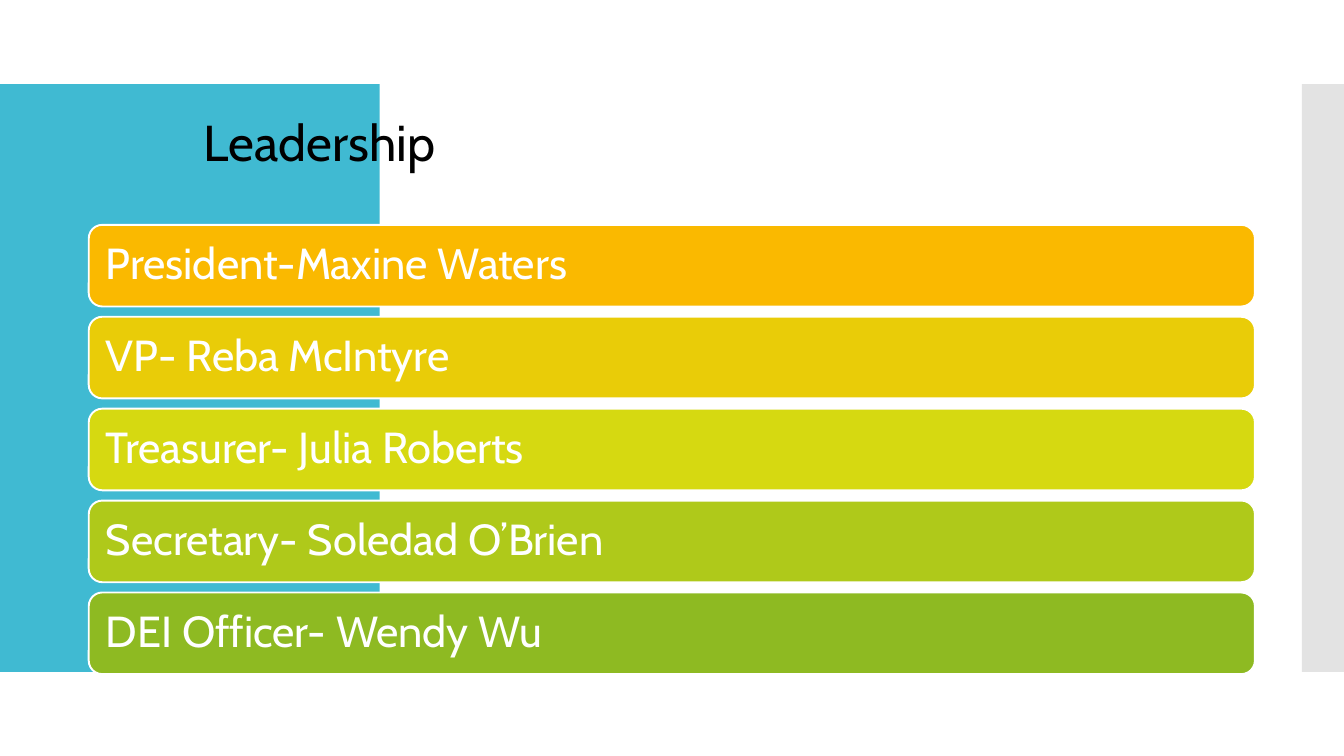
from lxml import etree
from pptx import Presentation
from pptx.dml.color import RGBColor
from pptx.enum import shapes, text
from pptx.oxml import ns
from pptx.util import Pt

TITLE = "Leadership"
OFFICERS = [
    ("President-Maxine Waters", RGBColor(0xFA, 0xB9, 0x00)),
    ("VP- Reba McIntyre", RGBColor(0xE9, 0xCC, 0x08)),
    ("Treasurer- Julia Roberts", RGBColor(0xD6, 0xD9, 0x11)),
    ("Secretary- Soledad O’Brien", RGBColor(0xAF, 0xC9, 0x1A)),
    ("DEI Officer- Wendy Wu", RGBColor(0x8E, 0xBA, 0x22)),
]

FONT = "Cabin"
BLACK = RGBColor(0x00, 0x00, 0x00)
WHITE = RGBColor(0xFF, 0xFF, 0xFF)
TEAL = RGBColor(0x40, 0xBA, 0xD2)
GREY = RGBColor(0xC8, 0xC8, 0xC8)

SLIDE_WIDTH, SLIDE_HEIGHT = 960, 540
BAND_TOP, BAND_HEIGHT = 60, 420
TEAL_WIDTH, GREY_WIDTH = 271.2, 30
BAR_LEFT, BAR_TOP, BAR_WIDTH, BAR_HEIGHT = 63.4, 160.6, 833, 58.3
BAR_PITCH = 65.65
BAR_INSET = 9.4


def add_filled(slide, kind, left, top, width, height, color):
    shape = slide.shapes.add_shape(kind, Pt(left), Pt(top), Pt(width), Pt(height))
    shape.shadow.inherit = False
    shape.fill.solid()
    shape.fill.fore_color.rgb = color
    return shape


def add_band(slide, left, width, color):
    band = add_filled(slide, shapes.MSO_SHAPE.RECTANGLE, left, BAND_TOP,
                      width, BAND_HEIGHT, color)
    band.line.fill.background()
    return band


def write_line(frame, words, size, color, insets):
    """Put one left-aligned, vertically centred line in a text frame."""
    frame.word_wrap = True
    frame.auto_size = text.MSO_AUTO_SIZE.NONE
    frame.vertical_anchor = text.MSO_ANCHOR.MIDDLE
    frame.margin_left = frame.margin_right = Pt(insets[0])
    frame.margin_top = frame.margin_bottom = Pt(insets[1])
    paragraph = frame.paragraphs[0]
    paragraph.alignment = text.PP_ALIGN.LEFT
    paragraph.line_spacing = 0.9
    run = paragraph.add_run()
    run.text = words
    run.font.name = FONT
    run.font.size = Pt(size)
    run.font.color.rgb = color


def main():
    presentation = Presentation()
    presentation.slide_width = Pt(SLIDE_WIDTH)
    presentation.slide_height = Pt(SLIDE_HEIGHT)
    slide = presentation.slides.add_slide(presentation.slide_layouts[5])

    add_band(slide, 0, TEAL_WIDTH, TEAL)
    grey_band = add_band(slide, SLIDE_WIDTH - GREY_WIDTH, GREY_WIDTH, GREY)
    grey_color = next(grey_band.element.spPr.iter(ns.qn("a:srgbClr")))
    etree.SubElement(grey_color, ns.qn("a:alpha"), val="50000")

    title = slide.shapes.title
    title.left, title.top = Pt(138.2), Pt(62.6)
    title.width, title.height = Pt(683.3), Pt(82.8)
    write_line(title.text_frame, TITLE, 36, BLACK, (7.2, 3.6))
    grey_band.element.addnext(title.element)  # title stands in front of the bands

    for index, (officer, color) in enumerate(OFFICERS):
        bar = add_filled(slide, shapes.MSO_SHAPE.ROUNDED_RECTANGLE, BAR_LEFT,
                         BAR_TOP + index * BAR_PITCH, BAR_WIDTH, BAR_HEIGHT, color)
        bar.line.color.rgb = WHITE
        bar.line.width = Pt(1.35)
        write_line(bar.text_frame, officer, 31, WHITE, (BAR_INSET, BAR_INSET))

    presentation.save("out.pptx")


if __name__ == "__main__":
    main()
